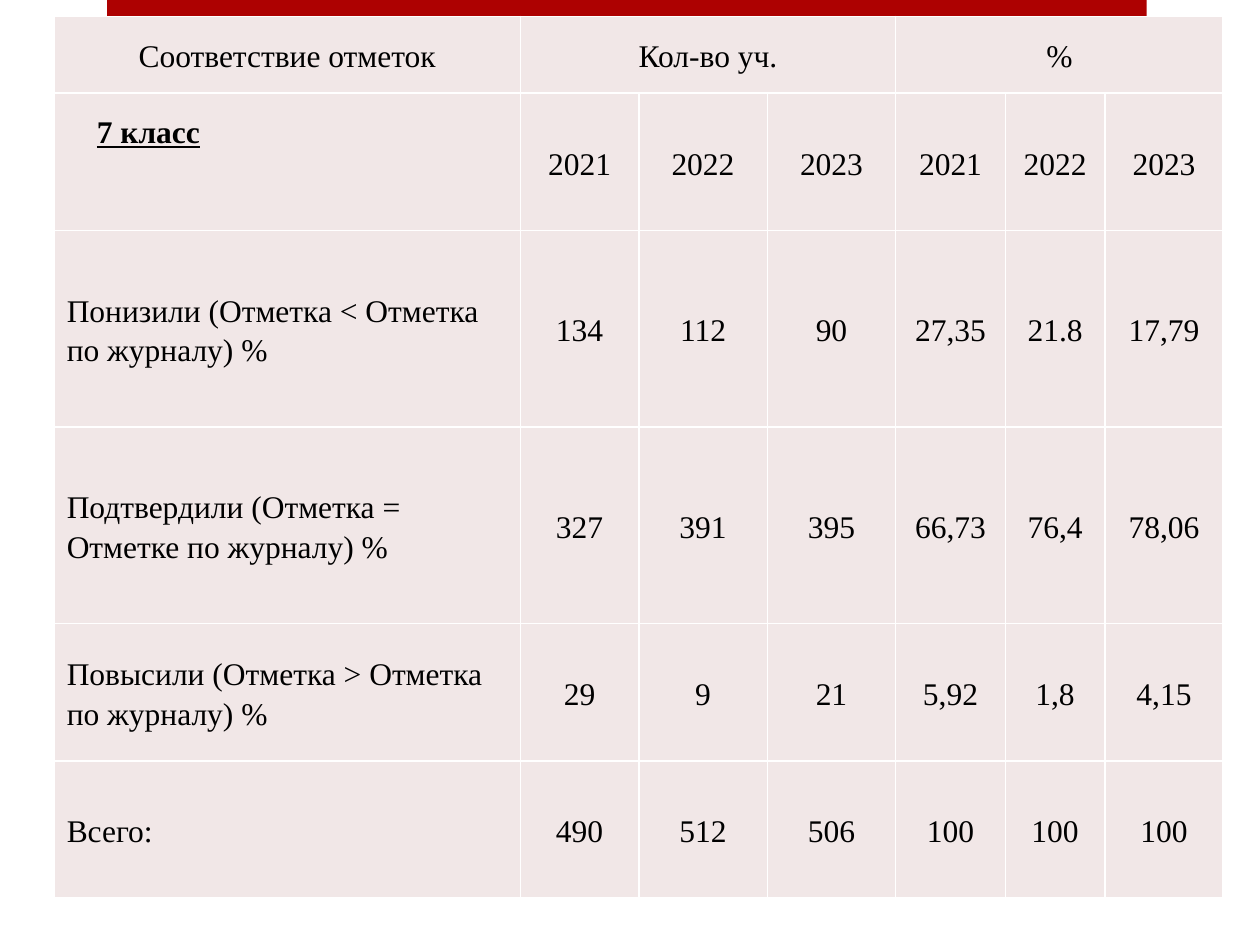
import pptx
import pptx.dml.color
import pptx.enum.shapes
import pptx.enum.text
import pptx.oxml
import pptx.oxml.ns
import pptx.util
import lxml.etree

Inches = pptx.util.Inches
RGBColor = pptx.dml.color.RGBColor
ALIGN = pptx.enum.text.PP_ALIGN
MIDDLE = pptx.enum.text.MSO_ANCHOR.MIDDLE

RED = RGBColor(0xAD, 0x01, 0x01)
PINK = RGBColor(0xF1, 0xE7, 0xE7)
BLACK = RGBColor(0, 0, 0)
WHITE = RGBColor(0xFF, 0xFF, 0xFF)

COLS = [3.7, 0.94, 1.02, 1.02, 0.87, 0.79, 0.94]
ROWS = [0.61, 1.09, 1.56, 1.56, 1.09, 1.09]
YEARS = ["2021", "2022", "2023"]
MARKS = [
    ["Соответствие отметок", "Кол-во уч.", "", "", "%", "", ""],
    [""] + YEARS * 2,
    ["Понизили (Отметка < Отметка по журналу) %",
     "134", "112", "90", "27,35", "21.8", "17,79"],
    ["Подтвердили (Отметка = Отметке по журналу) %",
     "327", "391", "395", "66,73", "76,4", "78,06"],
    ["Повысили (Отметка > Отметка по журналу) %",
     "29", "9", "21", "5,92", "1,8", "4,15"],
    ["Всего:", "490", "512", "506", "100", "100", "100"],
]


class Deck:
    font = {"name": "Times New Roman", "size": pptx.util.Pt(18)}

    def __init__(self, width, height):
        self.prs = pptx.Presentation()
        self.prs.slide_width = Inches(width)
        self.prs.slide_height = Inches(height)
        self.s = self.prs.slides.add_slide(self.prs.slide_layouts[6])

    def add_text(self, p, text, **extra):
        r = p.add_run()
        r.text = text
        for key, value in {**self.font, **extra}.items():
            setattr(r.font, key, value)
        r.font.color.rgb = BLACK

    def bar(self, box, color):
        sp = self.s.shapes.add_shape(
            pptx.enum.shapes.MSO_SHAPE.RECTANGLE, *map(Inches, box))
        sp.shadow.inherit = False
        sp.fill.solid()
        sp.fill.fore_color.rgb = color
        sp.line.fill.background()

    def label(self, box, text, **extra):
        sp = self.s.shapes.add_textbox(*map(Inches, box))
        tf = sp.text_frame
        tf.word_wrap = False
        tf.auto_size = pptx.enum.text.MSO_AUTO_SIZE.SHAPE_TO_FIT_TEXT
        self.add_text(tf.paragraphs[0], text, **extra)

    def borders(self, cell, color, width):
        tc_pr = cell._tc.get_or_add_tcPr()
        qn = pptx.oxml.ns.qn
        for i, side in enumerate(("a:lnL", "a:lnR", "a:lnT", "a:lnB")):
            ln = lxml.etree.Element(qn(side), w=str(pptx.util.Pt(width)))
            fill = lxml.etree.SubElement(ln, qn("a:solidFill"))
            lxml.etree.SubElement(fill, qn("a:srgbClr"), val=str(color))
            tc_pr.insert(i, ln)

    def table(self, left, top, cols, rows, texts, merges):
        sp = self.s.shapes.add_table(
            len(rows), len(cols), Inches(left), Inches(top),
            Inches(sum(cols)), Inches(sum(rows)))
        tbl = sp.table
        for col, width in zip(tbl.columns, cols):
            col.width = Inches(width)
        for row, height in zip(tbl.rows, rows):
            row.height = Inches(height)
        for i, line in enumerate(texts):
            for j, text in enumerate(line):
                cell = tbl.cell(i, j)
                cell.fill.solid()
                cell.fill.fore_color.rgb = PINK
                cell.vertical_anchor = MIDDLE
                self.borders(cell, WHITE, 1)
                if text:
                    p = cell.text_frame.paragraphs[0]
                    p.alignment = ALIGN.LEFT if i and not j else ALIGN.CENTER
                    p.line_spacing = 1.14
                    self.add_text(p, text)
        for row, first, last in merges:
            tbl.cell(row, first).merge(tbl.cell(row, last))


def main():
    deck = Deck(10, 7.5)
    deck.bar((0.85, 0, 8.25, 0.42), RED)
    deck.table(0.43, 0.13, COLS, ROWS, MARKS, [(0, 1, 3), (0, 4, 6)])
    deck.label((0.67, 0.84, 1.03, 0.4), "7 класс", bold=True, underline=True)
    deck.prs.save("out.pptx")


if __name__ == "__main__":
    main()
